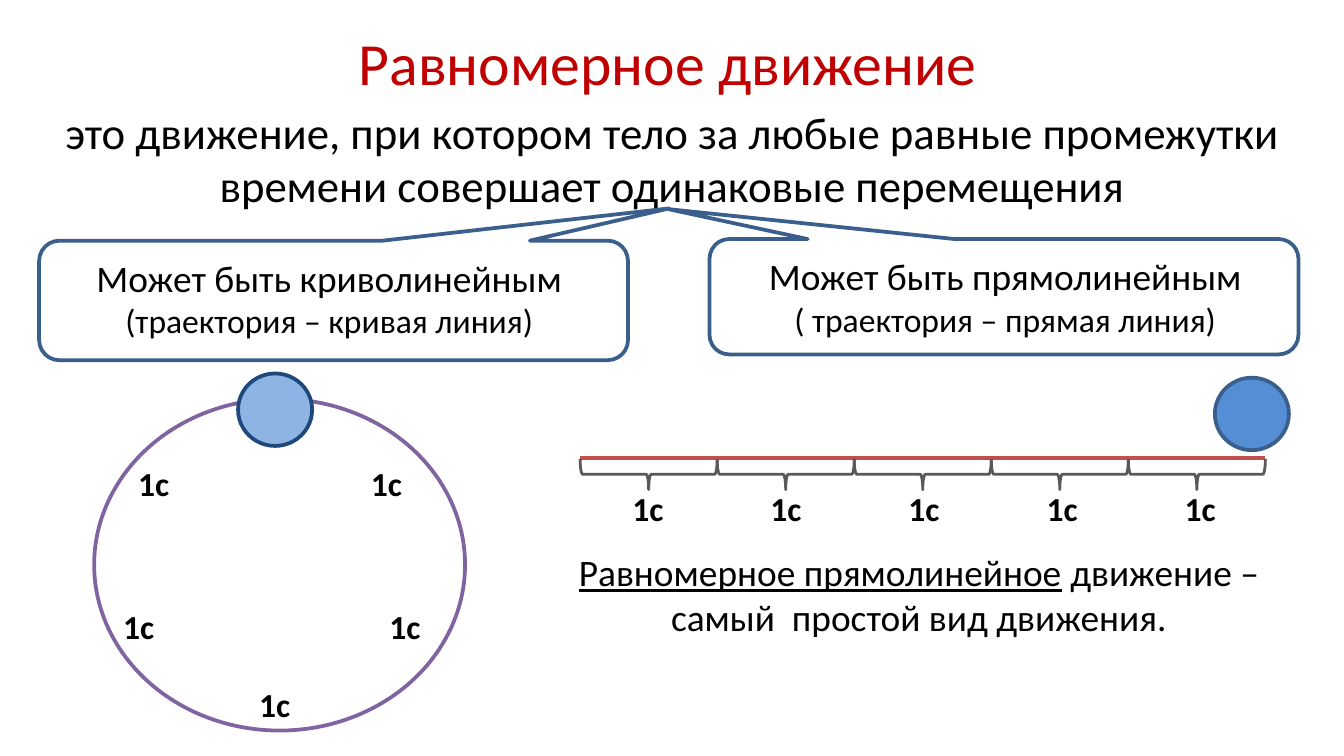
"""Builds a physics slide on uniform motion."""
import dataclasses

import lxml.etree
import pptx
import pptx.dml.color
import pptx.enum.shapes
import pptx.enum.text
import pptx.oxml.ns
import pptx.util

Cm = pptx.util.Cm
Kind = pptx.enum.shapes.MSO_SHAPE


@dataclasses.dataclass(frozen=True)
class Theme:
    face: str = "Calibri"
    title: int = 32
    lead: int = 24
    head: int = 20
    note: int = 18
    thick: float = 2
    thin: float = 1.5
    red: str = "C00000"
    black: str = "000000"
    white: str = "FFFFFF"
    edge: str = "3A5F8C"
    navy: str = "1F497D"
    blue: str = "558ED5"
    pale: str = "8EB4E3"
    plum: str = "8064A2"
    rose: str = "C0504D"
    gray: str = "595959"


def tint(code):
    return pptx.dml.color.RGBColor.from_string(code)


def apply(item, form):
    for key, value in form.items():
        setattr(item, key, value)


class Pen:
    def __init__(self, slide, theme):
        self.slide = slide
        self.theme = theme

    def text(self, place, lines, wrap=False, center=True):
        box = self.slide.shapes.add_textbox(*map(Cm, place))
        frame = box.text_frame
        apply(frame, {"word_wrap": wrap,
                      "auto_size": pptx.enum.text.MSO_AUTO_SIZE.SHAPE_TO_FIT_TEXT})
        for index, runs in enumerate(lines):
            para = frame.add_paragraph() if index else frame.paragraphs[0]
            if center:
                para.alignment = pptx.enum.text.PP_ALIGN.CENTER
            for words, size, form in runs:
                run = para.add_run()
                run.text = words
                base = {"name": self.theme.face, "size": pptx.util.Pt(size)}
                hue = form.get("hue", self.theme.black)
                extra = {key: form[key] for key in form if key != "hue"}
                apply(run.font, base | extra)
                run.font.color.rgb = tint(hue)

    def shape(self, kind, place, edge, fill=None, width=None, turn=0, bends=()):
        item = self.slide.shapes.add_shape(kind, *map(Cm, place))
        apply(item, {"rotation": turn})
        item.shadow.inherit = False
        if fill:
            item.fill.solid()
            item.fill.fore_color.rgb = tint(fill)
        else:
            item.fill.background()
        self.stroke(item, edge, width or self.theme.thick)
        for index, value in enumerate(bends):
            item.adjustments[index] = value

    def line(self, start, end, edge):
        straight = pptx.enum.shapes.MSO_CONNECTOR.STRAIGHT
        item = self.slide.shapes.add_connector(straight, *map(Cm, start + end))
        self.stroke(item, edge, self.theme.thick)
        lxml.etree.SubElement(item._element.spPr, pptx.oxml.ns.qn("a:effectLst"))

    def stroke(self, item, edge, width):
        item.line.color.rgb = tint(edge)
        item.line.width = pptx.util.Pt(width)

    def callout(self, place, bends):
        self.shape(Kind.ROUNDED_RECTANGULAR_CALLOUT, place, self.theme.edge, bends=bends)

    def ball(self, left, top, edge, fill):
        self.shape(Kind.OVAL, (left, top, 1.4, 1.37), edge, fill)

    def brace(self, left):
        self.shape(Kind.LEFT_BRACE, (left, 7.67, 0.58, 2.59), self.theme.gray,
                   width=self.theme.thin, turn=270)

    def second(self, left, top):
        self.text((left, top, 1.12, 1.02), [[("1с", self.theme.note, {"bold": True})]],
                  center=False)


def main():
    deck = pptx.Presentation()
    apply(deck, {"slide_width": Cm(25.4), "slide_height": Cm(14.29)})
    theme = Theme()
    pen = Pen(deck.slides.add_slide(deck.slide_layouts[6]), theme)

    pen.text((6.53, 0.36, 12.29, 1.63),
             [[("Равномерное движение", theme.title, {"hue": theme.red})]], center=False)
    pen.text((0.71, 1.85, 23.98, 2.31),
             [[("это движение, при котором тело за любые равные промежутки "
                "времени совершает одинаковые перемещения", theme.lead, {})]], wrap=True)

    cards = [
        ((0.74, 4.55, 11.13, 2.26), (0.57, -0.77, 0.17), (1.4, 4.7, 9.65, 1.88),
         "Может быть криволинейным", "(траектория – кривая линия)"),
        ((13.41, 4.52, 11.13, 2.18), (-0.57, -0.76, 0.17), (14.1, 4.67, 9.8, 1.88),
         "Может быть прямолинейным", "( траектория – прямая линия)"),
    ]
    for place, bends, spot, head, note in cards:
        pen.callout(place, bends)
        pen.text(spot, [[(head, theme.head, {})], [(note, theme.note, {})]])

    pen.shape(Kind.OVAL, (1.78, 7.54, 7.01, 6.27), theme.plum, theme.white)
    for left, top in [(2.36, 8.62), (6.76, 8.62), (2.08, 11.33), (7.11, 11.33), (4.65, 12.8)]:
        pen.second(left, top)
    pen.ball(4.5, 7.06, theme.navy, theme.pale)

    pen.line((10.97, 8.66), (23.9, 8.66), theme.rose)
    pen.ball(22.96, 7.14, theme.edge, theme.blue)
    for step in range(5):
        pen.brace(11.97 + 2.59 * step)
        pen.second(11.7 + 2.61 * step, 9.09)

    pen.text((10.03, 10.26, 14.68, 1.96),
             [[("Равномерное прямолинейное", theme.head, {"underline": True}),
               (" движение – самый  простой вид движения.", theme.head, {})]], wrap=True)
    deck.save("out.pptx")


if __name__ == "__main__":
    main()
